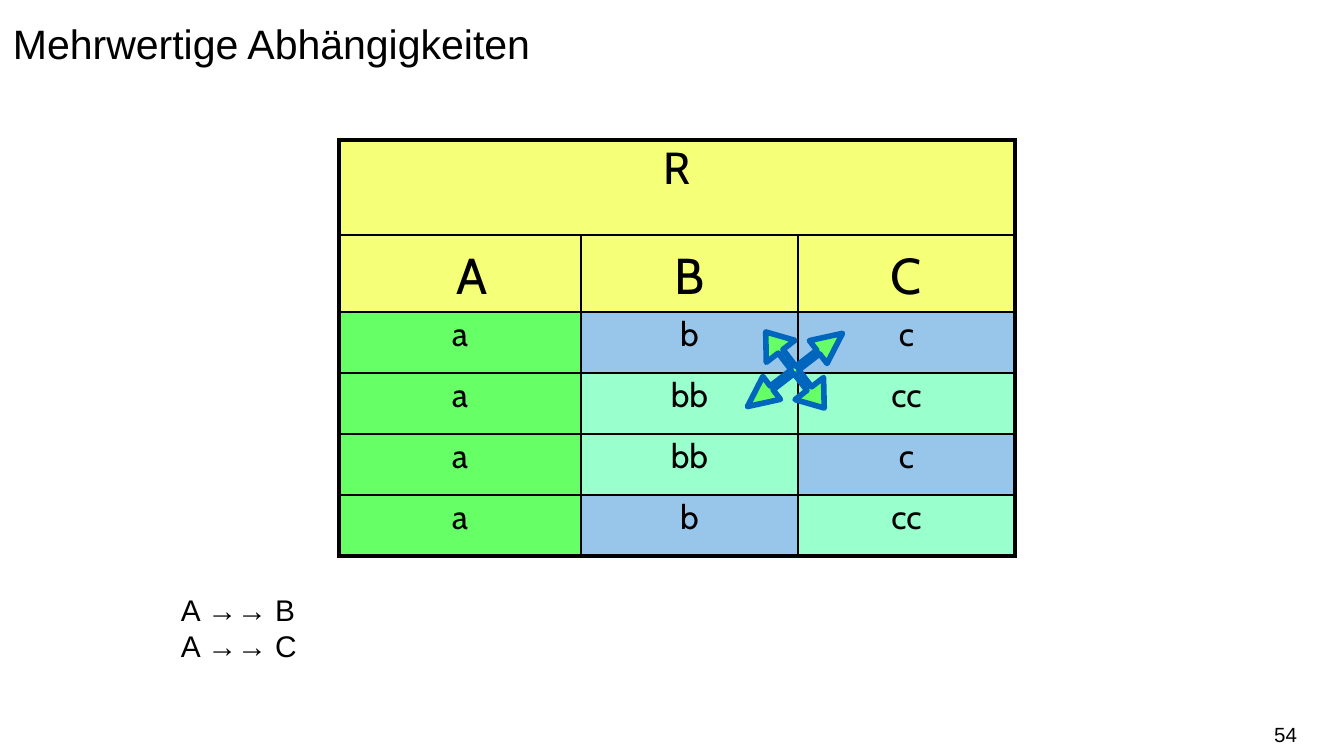
from lxml import etree
from pptx import Presentation
from pptx.dml.color import RGBColor
from pptx.enum.text import MSO_ANCHOR, PP_ALIGN
from pptx.oxml.ns import qn
from pptx.util import Pt

PX = 914400 / 134.4
LEFT, CENTER, RIGHT = PP_ALIGN.LEFT, PP_ALIGN.CENTER, PP_ALIGN.RIGHT
TOP, MIDDLE = MSO_ANCHOR.TOP, MSO_ANCHOR.MIDDLE
YELLOW, GREEN, BLUE, MINT = "F6FF78", "66FF66", "98C6EA", "99FFCC"


def px(n):
    return round(n * PX)


def rgb(value):
    return RGBColor.from_string(value)


prs = Presentation()
prs.slide_width, prs.slide_height = px(1344), px(756)
s = prs.slides.add_slide(prs.slide_layouts[6])

# Title, dependencies and page number
texts = [
    (0, 0, 1344, 126, 13, ["Mehrwertige Abhängigkeiten"], 22, LEFT, TOP, 1.25),
    (168, 585, 1008, 171, 13, ["A →→ B", "A →→ C"], 16, LEFT, TOP, 1),
    (996, 714, 301, 40, 0, ["54"], 11, RIGHT, MIDDLE, 1),
]
for x, y, w, h, inset, lines, size, align, anchor, spacing in texts:
    tf = s.shapes.add_textbox(px(x), px(y), px(w), px(h)).text_frame
    tf.word_wrap = True
    tf.vertical_anchor = anchor
    tf.margin_left = tf.margin_right = px(inset)
    tf.text = "\n".join(lines)
    for p in tf.paragraphs:
        p.alignment = align
        p.line_spacing = spacing
        p.font.name, p.font.size = "Arial", Pt(size)
        p.font.color.rgb = rgb("000000")

# Relation R: the narrow first column only offsets the heading A
col_widths = [24, 218, 217, 217]
row_heights = [95, 77, 61, 61, 61, 61]
fills = {"a": GREEN, "b": BLUE, "c": BLUE, "bb": MINT, "cc": MINT}
rows = [
    ["R", "", "", ""],
    ["", "A", "B", "C"],
    ["a", "", "b", "c"],
    ["a", "", "bb", "cc"],
    ["a", "", "bb", "c"],
    ["a", "", "b", "cc"],
]
table = s.shapes.add_table(len(rows), len(col_widths), px(339), px(140),
                           px(sum(col_widths)), px(sum(row_heights))).table
for col, width in zip(table.columns, col_widths):
    col.width = px(width)
for row, height in zip(table.rows, row_heights):
    row.height = px(height)

table.cell(0, 0).merge(table.cell(0, 3))
for i in range(2, len(rows)):
    table.cell(i, 0).merge(table.cell(i, 1))

for i, row in enumerate(rows):
    for j, text in enumerate(row):
        cell = table.cell(i, j)
        last = j + (cell.span_width if cell.is_merge_origin else 1) - 1
        # Thick outer frame, thin inner lines, none beside the offset column
        widths = {
            "a:lnL": 2.25 if j == 0 else 0 if i == 1 and j == 1 else 1,
            "a:lnR": 2.25 if last == 3 else 0 if i == 1 and j == 0 else 1,
            "a:lnT": 2.25 if i == 0 else 1,
            "a:lnB": 2.25 if i == len(rows) - 1 else 1,
        }
        tcPr = cell._tc.get_or_add_tcPr()
        for tag, width in widths.items():
            ln = etree.SubElement(tcPr, qn(tag), w=str(Pt(width)))
            if width:
                fill = etree.SubElement(ln, qn("a:solidFill"))
                etree.SubElement(fill, qn("a:srgbClr"), val="000000")
            else:
                etree.SubElement(ln, qn("a:noFill"))
        cell.fill.solid()
        cell.fill.fore_color.rgb = rgb(YELLOW if i < 2 else fills[row[0] if j < 2 else text])
        cell.margin_left = cell.margin_right = px(9)
        cell.margin_top = cell.margin_bottom = px(5)
        if text:
            cell.text = text
            p = cell.text_frame.paragraphs[0]
            p.alignment = CENTER
            p.line_spacing = 1.1 if i == 1 else 0.9
            p.font.name = "Cabin"
            p.font.size = Pt({0: 24, 1: 27}.get(i, 18))
            p.font.color.rgb = rgb("000000")

# Four-way arrow: one arm, in percent of the half size, turned by quarters
arm = [(0, -100), (30, -49), (5, -49), (5, -5), (49, -5), (49, -30)]
points = []
for quarter in range(4):
    points += arm
    arm = [(-y, x) for x, y in arm]
builder = s.shapes.build_freeform(*points[0], scale=(60 * PX / 100, 48 * PX / 100))
builder.add_line_segments(points[1:], close=True)
sp = builder.convert_to_shape(px(795), px(370))
sp.rotation = -37.6
sp.shadow.inherit = False
sp.fill.solid()
sp.fill.fore_color.rgb = rgb(GREEN)
sp.line.color.rgb = rgb("0065BD")
sp.line.width = Pt(3)

prs.save("out.pptx")
